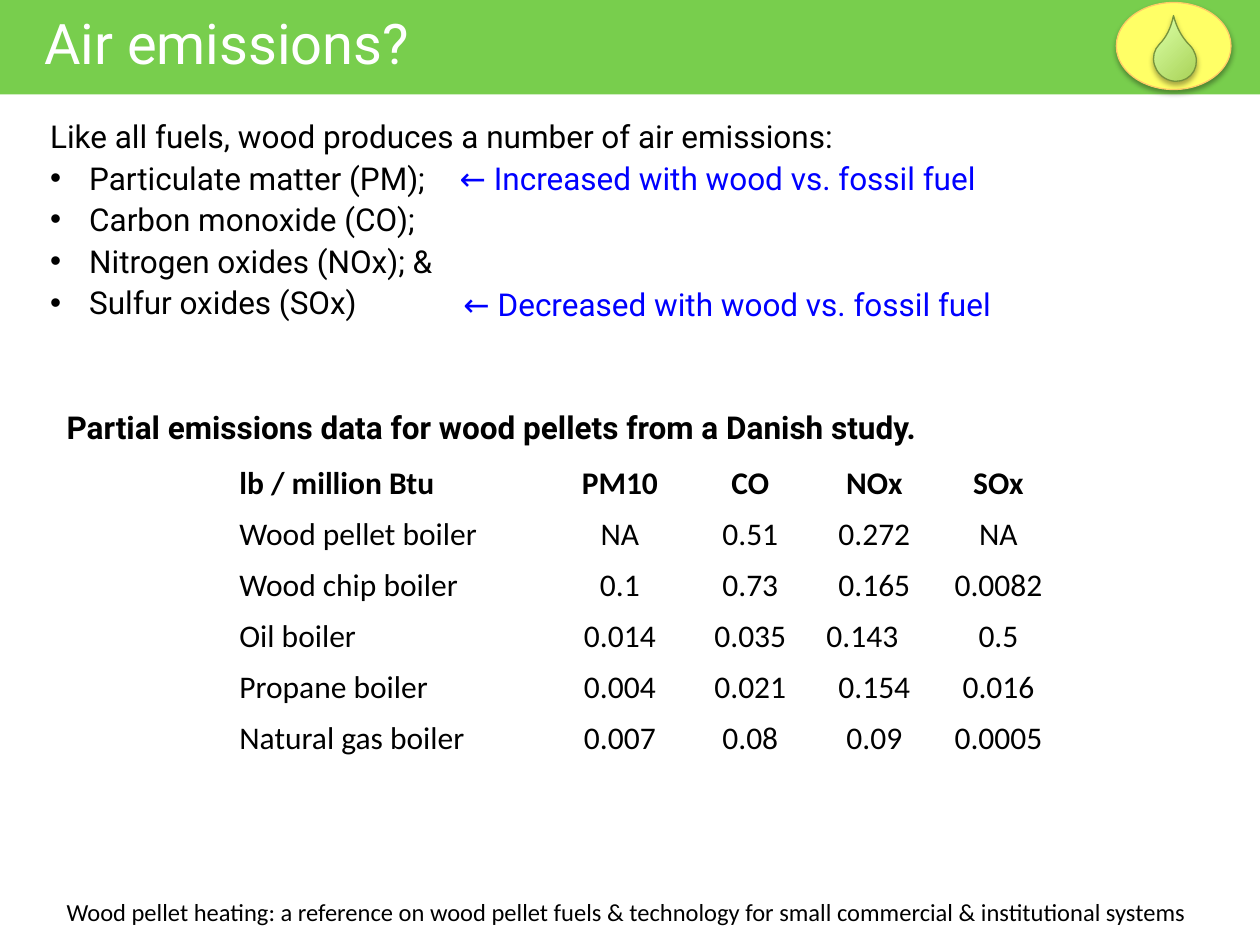
"""Build the slide on air emissions from wood fuel."""
from lxml import etree
from pptx import Presentation
from pptx.dml.color import RGBColor
from pptx.enum.shapes import MSO_SHAPE
from pptx.enum.text import MSO_ANCHOR, MSO_AUTO_SIZE, PP_ALIGN
from pptx.oxml.ns import qn
from pptx.util import Inches, Pt

RECTANGLE, OVAL, TEAR = MSO_SHAPE.RECTANGLE, MSO_SHAPE.OVAL, MSO_SHAPE.TEAR
LEFT, CENTER = PP_ALIGN.LEFT, PP_ALIGN.CENTER
TOP, NO_FIT = MSO_ANCHOR.TOP, MSO_AUTO_SIZE.NONE

THEME = {
    "heading_font": "Roboto", "table_font": "Calibri",
    "title_size": 32, "body_size": 18, "footer_size": 14,
    "white": "FFFFFF", "black": "000000", "blue": "0000FF", "banner": "78CE4D",
    "badge": "FFFF66", "badge_line": "FFCC66", "drop_line": "77933C",
    "drop_start": "A0CA4A", "drop_end": "DAFFA5",
}

TITLE = "Air emissions?"
FOOTER = ("Wood pellet heating: a reference on wood pellet fuels & technology "
          "for small commercial & institutional systems")
INTRO = "Like all fuels, wood produces a number of air emissions:"
EMISSIONS = ["Particulate matter (PM);", "Carbon monoxide (CO);",
             "Nitrogen oxides (NOx); &", "Sulfur oxides (SOx)"]
REMARKS = [
    ("← Increased with wood vs. fossil fuel", (3.55, 1.18, 5.6, 0.43)),
    ("← Decreased with wood vs. fossil fuel", (3.58, 2.18, 5.6, 0.43)),
]
CAPTION = "Partial emissions data for wood pellets from a Danish study."
EMISSION_ROWS = [
    ("lb / million Btu", "PM10", "CO", "NOx", "SOx"),
    ("Wood pellet boiler", "NA", "0.51", "0.272", "NA"),
    ("Wood chip boiler", "0.1", "0.73", "0.165", "0.0082"),
    ("Oil boiler", "0.014", "0.035", "0.143", "0.5"),
    ("Propane boiler", "0.004", "0.021", "0.154", "0.016"),
    ("Natural gas boiler", "0.007", "0.08", "0.09", "0.0005"),
]
LEFT_ALIGNED_VALUES = {(3, 3)}
COLUMN_WIDTHS = [2.59, 1.06, 1.01, 0.96, 1.01]
TABLE_LEFT, TABLE_TOP, TABLE_HEIGHT = 1.8, 3.64, 2.43


def color(name):
    return RGBColor.from_string(THEME[name])


def place(box, area):
    box.left, box.top, box.width, box.height = map(Inches, area)


def write(frame, lines, size="body_size", font="heading_font", ink="black",
          bold=False, spacing=None):
    frame.text = "\n".join(lines)
    for para in frame.paragraphs:
        para.line_spacing = spacing
        for span in para.runs:
            span.font.name = THEME[font]
            span.font.size = Pt(THEME[size])
            span.font.color.rgb = color(ink)
            span.font.bold = bold


def add_text(page, lines, area, wrap=True, **style):
    box = page.shapes.add_textbox(*map(Inches, area))
    box.text_frame.word_wrap = wrap
    write(box.text_frame, lines, **style)
    return box


def add_bullet(para):
    properties = para._p.get_or_add_pPr()
    properties.set("marL", str(Inches(0.31)))
    properties.set("indent", str(Inches(-0.31)))
    etree.SubElement(properties, qn("a:buFont"), typeface="Arial")
    etree.SubElement(properties, qn("a:buChar"), char="•")


def add_figure(shapes, kind, area, line=None):
    figure = shapes.add_shape(kind, *map(Inches, area))
    figure.shadow.inherit = False
    if line:
        figure.line.color.rgb = color(line)
        figure.line.width = Pt(0.75)
    else:
        figure.line.fill.background()
    return figure


def add_shadow(figure):
    effects = figure._element.spPr.find(qn("a:effectLst"))
    shadow = etree.SubElement(effects, qn("a:outerShdw"), blurRad=str(Pt(3.1)),
                              dist=str(Pt(1.8)), dir="5400000", rotWithShape="0")
    shade = etree.SubElement(shadow, qn("a:srgbClr"), val=THEME["black"])
    etree.SubElement(shade, qn("a:alpha"), val="35000")


def add_header(page):
    banner = add_figure(page.shapes, RECTANGLE, (0, 0, 10, 0.75))
    banner.fill.solid()
    banner.fill.fore_color.rgb = color("banner")
    title = page.shapes.title
    banner._element.addnext(title._element)
    place(title, (0.25, 0.02, 3.19, 0.64))
    frame = title.text_frame
    write(frame, [TITLE], size="title_size", ink="white")
    frame.word_wrap = False
    frame.auto_size = NO_FIT
    frame.vertical_anchor = TOP
    frame.paragraphs[0].alignment = LEFT


def add_badge(page):
    group = page.shapes.add_group_shape()
    badge = add_figure(group.shapes, OVAL, (8.86, 0.02, 0.91, 0.69), "badge_line")
    badge.fill.solid()
    badge.fill.fore_color.rgb = color("badge")
    drop = add_figure(group.shapes, TEAR, (9.16, 0.3, 0.33, 0.35), "drop_line")
    drop.rotation = 314.8
    drop.adjustments[0] = 1.465
    drop.fill.gradient()
    drop.fill.gradient_angle = 90
    for stop, name in zip(drop.fill.gradient_stops, ("drop_start", "drop_end")):
        stop.color.rgb = color(name)
    for figure in (badge, drop):
        add_shadow(figure)


def add_emissions_table(page):
    area = (TABLE_LEFT, TABLE_TOP, sum(COLUMN_WIDTHS), TABLE_HEIGHT)
    table = page.shapes.add_table(len(EMISSION_ROWS), len(COLUMN_WIDTHS),
                                  *map(Inches, area)).table
    table.first_row = table.horz_banding = False
    for column, width in zip(table.columns, COLUMN_WIDTHS):
        column.width = Inches(width)
    for row, values in enumerate(EMISSION_ROWS):
        for column, value in enumerate(values):
            cell = table.cell(row, column)
            cell.fill.background()
            write(cell.text_frame, [value], font="table_font", bold=row == 0)
            at_left = column == 0 or (row, column) in LEFT_ALIGNED_VALUES
            cell.text_frame.paragraphs[0].alignment = LEFT if at_left else CENTER


def main():
    deck = Presentation()
    deck.slide_width, deck.slide_height = Inches(10), Inches(7.5)
    page = deck.slides.add_slide(deck.slide_layouts[5])
    add_header(page)
    add_text(page, [FOOTER], (0.43, 7.07, 9.12, 0.34), wrap=False,
             size="footer_size", font="table_font")
    add_badge(page)
    body = add_text(page, [INTRO, *EMISSIONS], (0.3, 0.85, 9.47, 1.76), spacing=1.1)
    for para in body.text_frame.paragraphs[1:]:
        add_bullet(para)
    for remark, area in REMARKS:
        add_text(page, [remark], area, ink="blue", spacing=1.1)
    add_emissions_table(page)
    add_text(page, [CAPTION], (0.43, 3.16, 7.24, 0.43), bold=True, spacing=1.1)
    deck.save("out.pptx")


if __name__ == "__main__":
    main()
